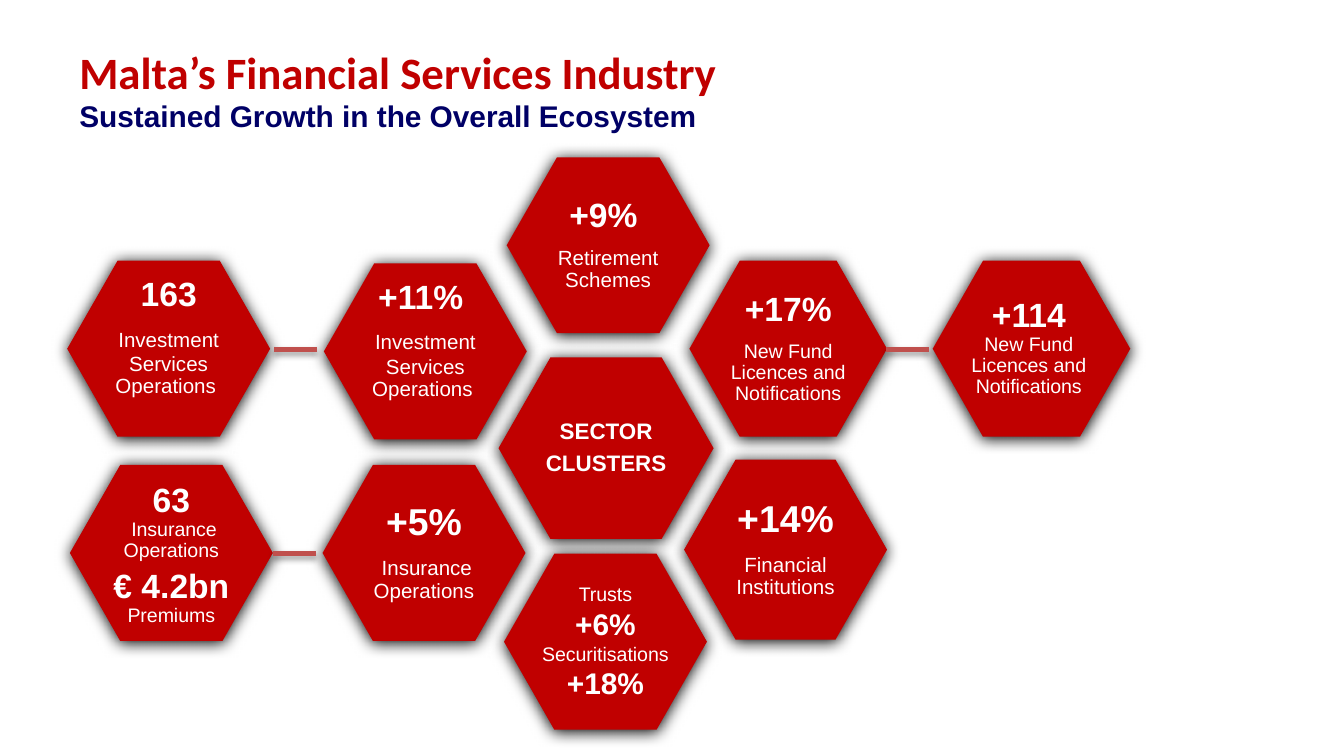
from lxml import etree
from pptx import Presentation
from pptx import util as u
from pptx.dml import color
from pptx.enum import shapes, text
from pptx.oxml import ns

RED, NAVY, WHITE, ROSE = "C00000", "000066", "FFFFFF", "C0504D"
HEX_SHADOW = dict(blur=8.5, dist=1, alpha=100)
LINK_SHADOW = dict(blur=3.1, dist=1.8, alpha=35)


def rgb(value):
    return color.RGBColor.from_string(value)


def big(words, size=18):
    return words, size, True


def small(words, size=11):
    return words, size, False


def plain(*runs):
    return runs, 1.0, 0


def tight(*runs):
    return runs, 0.9, 0.38


def close(*runs):
    return runs, 0.9, 0


class Deck:
    font = "Arial"
    text_share = 2 / 3

    def __init__(self, width):
        self.prs = Presentation()
        self.prs.slide_width = u.Inches(width)
        self.prs.slide_height = u.Inches(width * 9 / 16)
        self.s = self.prs.slides.add_slide(self.prs.slide_layouts[5])

    def set_frame(self, tf, anchor, x_inset, y_inset):
        values = dict(
            word_wrap=True, auto_size=text.MSO_AUTO_SIZE.NONE,
            vertical_anchor=anchor,
            margin_left=u.Inches(x_inset), margin_right=u.Inches(x_inset),
            margin_top=u.Inches(y_inset), margin_bottom=u.Inches(y_inset))
        for name, value in values.items():
            setattr(tf, name, value)

    def run(self, p, words, size, bold, fill=WHITE, font=None):
        r = p.add_run()
        r.text = words
        values = dict(name=font or self.font, size=u.Pt(size), bold=bold)
        for name, value in values.items():
            setattr(r.font, name, value)
        r.font.color.rgb = rgb(fill)

    def shadow(self, sp, blur, dist, alpha):
        sp_pr = sp._element.spPr
        for old in sp_pr.findall(ns.qn("a:effectLst")):
            sp_pr.remove(old)
        effects = etree.SubElement(sp_pr, ns.qn("a:effectLst"))
        outer = etree.SubElement(
            effects, ns.qn("a:outerShdw"), blurRad=str(u.Pt(blur)),
            dist=str(u.Pt(dist)), dir="5400000", rotWithShape="0")
        tint = etree.SubElement(outer, ns.qn("a:srgbClr"), val="000000")
        etree.SubElement(tint, ns.qn("a:alpha"), val=str(alpha * 1000))

    def title(self, box, heading, subtitle):
        sp = self.s.shapes.title
        sp.left, sp.top, sp.width, sp.height = map(u.Inches, box)
        self.set_frame(sp.text_frame, text.MSO_ANCHOR.TOP, 0.07, 0.04)
        p = sp.text_frame.paragraphs[0]
        p.alignment = text.PP_ALIGN.LEFT
        self.run(p, heading, 24, True, RED, "Calibri")
        p.add_line_break()
        self.run(p, subtitle, 16, True, NAVY)

    def hexagon(self, x, y, w, h):
        sp = self.s.shapes.add_shape(
            shapes.MSO_SHAPE.HEXAGON, *map(u.Inches, (x, y, w, h)))
        sp.adjustments[0] = 0.286
        sp.fill.solid()
        sp.fill.fore_color.rgb = rgb(RED)
        sp.line.fill.background()
        self.shadow(sp, **HEX_SHADOW)

    def label(self, x, y, w, h, paragraphs):
        sp = self.s.shapes.add_textbox(*map(u.Inches, (x, y, w, h)))
        tf = sp.text_frame
        self.set_frame(tf, text.MSO_ANCHOR.MIDDLE, 0.03, 0.03)
        for i, (runs, spacing, gap) in enumerate(paragraphs):
            p = tf.add_paragraph() if i else tf.paragraphs[0]
            values = dict(alignment=text.PP_ALIGN.CENTER,
                          line_spacing=spacing,
                          space_after=u.Pt(gap * runs[0][1]))
            for name, value in values.items():
                setattr(p, name, value)
            for r in runs:
                self.run(p, *r)

    def cell(self, x, y, w, h, paragraphs, dx=0, dy=0):
        self.hexagon(x, y, w, h)
        share = self.text_share
        margin = (1 - share) / 2
        self.label(x + w * margin + dx, y + h * margin + dy,
                   w * share, h * share, paragraphs)

    def link(self, x, y, length=0.32):
        sp = self.s.shapes.add_connector(
            shapes.MSO_CONNECTOR.STRAIGHT,
            *map(u.Inches, (x, y, x + length, y)))
        sp.line.color.rgb = rgb(ROSE)
        sp.line.width = u.Pt(3)
        self.shadow(sp, **LINK_SHADOW)


def investment(figure):
    return [tight(big(figure)), plain(small("Investment Services")),
            close(small("Operations "))]


def main():
    deck = Deck(10)
    deck.title((0.52, 0.29, 6.75, 0.67), "Malta’s Financial Services Industry",
               "Sustained Growth in the Overall Ecosystem")

    w, h, narrow = 1.51, 1.31, 1.47
    funds = tight(small("New Fund Licences and Notifications", 10.5))
    deck.cell(3.71, 2.66, 1.6, 1.35,
              [tight(big("SECTOR", 12)), tight(big("CLUSTERS", 12))])
    deck.cell(3.77, 1.17, w, h,
              [tight(big("+9% ")), tight(small("Retirement Schemes"))])
    deck.cell(5.13, 1.94, narrow, h, [tight(big("+17%")), funds])
    deck.cell(3.75, 4.12, w, h,
              [plain(small("Trusts", 10.5)), plain(big("+6%", 16)),
               plain(small("Securitisations", 10.5)), plain(big("+18%", 16))])
    deck.cell(5.09, 3.42, w, 1.34,
              [tight(big("+14%", 20)), tight(small("Financial Institutions"))])
    deck.cell(2.4, 3.46, w, h,
              [tight(big("+5%", 20)), tight(small(" Insurance Operations"))])
    deck.cell(2.41, 1.96, w, h, investment("+11% "), dy=-0.08)
    deck.cell(0.52, 3.46, w, h,
              [plain(big("63")), tight(small(" Insurance Operations", 10.5)),
               tight(big("€ 4.2bn "), small("Premiums", 10.5))])
    deck.cell(0.5, 1.94, w, h, investment("163"), dy=-0.08)
    deck.cell(6.94, 1.94, narrow, h, [plain(big("+114")), funds],
              dx=-0.02, dy=-0.02)

    for x, y in ((2.03, 4.12), (2.04, 2.6), (6.59, 2.6)):
        deck.link(x, y)
    deck.prs.save("out.pptx")


if __name__ == "__main__":
    main()
